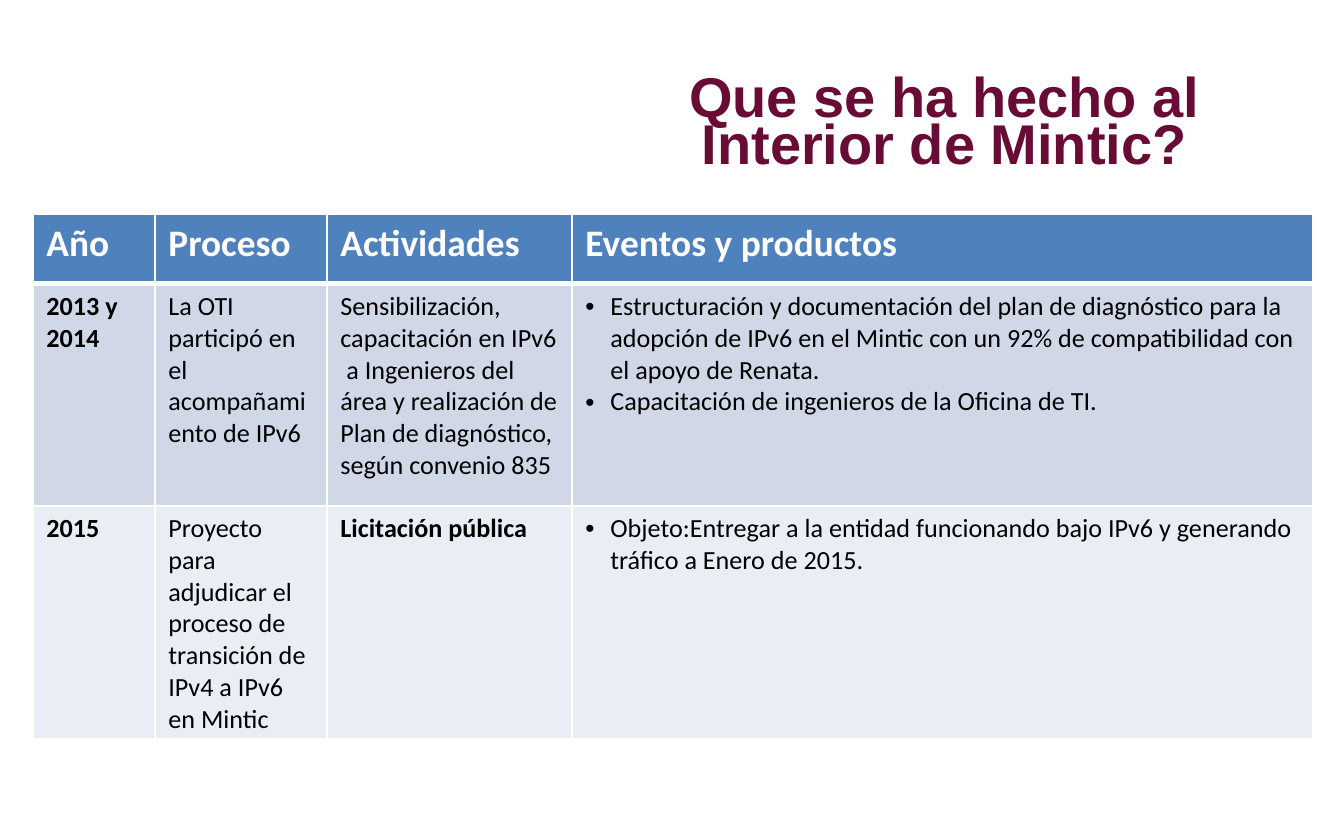
"""Build the slide on the IPv6 work done inside Mintic."""
from lxml.etree import SubElement
from pptx import Presentation
from pptx.dml.color import RGBColor
from pptx.enum.text import MSO_AUTO_SIZE, PP_ALIGN
from pptx.oxml.ns import qn
from pptx.util import Emu, Pt

TITLE = "Que se ha hecho al Interior de Mintic?"
HEADINGS = ["Año", "Proceso", "Actividades", "Eventos y productos"]
YEARS = [
    [
        ["2013 y", "2014"],
        ["La OTI participó en el acompañamiento de IPv6"],
        ["Sensibilización, capacitación en IPv6  a Ingenieros del área y "
         "realización de Plan de diagnóstico, según convenio 835"],
        ["Estructuración y documentación del plan de diagnóstico para la "
         "adopción de IPv6 en el Mintic con un 92% de compatibilidad con "
         "el apoyo de Renata.",
         "Capacitación de ingenieros de la Oficina de TI."],
    ],
    [
        ["2015"],
        ["Proyecto para adjudicar el proceso de transición de IPv4 a IPv6 "
         "en Mintic"],
        ["Licitación pública"],
        ["Objeto:Entregar a la entidad funcionando bajo IPv6 y generando "
         "tráfico a Enero de 2015."],
    ],
]
ROWS = [[[heading] for heading in HEADINGS]] + YEARS
BOLD_CELLS = {(1, 0), (2, 0), (2, 2)}
BULLET_COLUMN = 3
ROW_FILLS = ["4F81BD", "D0D8E8", "E9EDF4"]
COLUMN_WIDTHS = [122, 172, 245, 741]
ROW_HEIGHTS = [70, 222, 232]
TABLE_LEFT, TABLE_TOP = 33, 214
BULLET_INDENT = 25


def px(count):
    return Emu(round(count * 914400 / 134.4))


def color(code):
    return RGBColor.from_string(code)


def add_run(paragraph, words, font_name, size, code, bold):
    run = paragraph.add_run()
    run.text = words
    run.font.name = font_name
    run.font.size = Pt(size)
    run.font.bold = bold
    run.font.color.rgb = color(code)


def add_bullet(paragraph):
    properties = paragraph._p.get_or_add_pPr()
    properties.set("marL", str(px(BULLET_INDENT)))
    properties.set("indent", str(-px(BULLET_INDENT)))
    SubElement(properties, qn("a:buFont"), typeface="Arial")
    SubElement(properties, qn("a:buChar"), char="•")


def add_borders(cell, top, bottom):
    properties = cell._tc.get_or_add_tcPr()
    for side, width in (("L", 1), ("R", 1), ("T", top), ("B", bottom)):
        border = SubElement(properties, qn(f"a:ln{side}"), w=str(Pt(width)))
        fill = SubElement(border, qn("a:solidFill"))
        SubElement(fill, qn("a:srgbClr"), val="FFFFFF")


def add_title(slide):
    title = slide.shapes.add_textbox(px(575), px(73), px(739), px(109))
    frame = title.text_frame
    frame.word_wrap = True
    frame.auto_size = MSO_AUTO_SIZE.SHAPE_TO_FIT_TEXT
    paragraph = frame.paragraphs[0]
    paragraph.alignment = PP_ALIGN.CENTER
    paragraph.line_spacing = 0.7
    add_run(paragraph, TITLE, "Arial", 30, "680B35", True)


def fill_cell(cell, row, column, lines):
    is_heading = row == 0
    add_borders(cell, 3 if row == 1 else 1, 3 if is_heading else 1)
    cell.fill.solid()
    cell.fill.fore_color.rgb = color(ROW_FILLS[row])
    size, code = (20, "FFFFFF") if is_heading else (14, "000000")
    bold = is_heading or (row, column) in BOLD_CELLS
    frame = cell.text_frame
    for index, line in enumerate(lines):
        paragraph = frame.add_paragraph() if index else frame.paragraphs[0]
        if column == BULLET_COLUMN and not is_heading:
            add_bullet(paragraph)
        add_run(paragraph, line, "Calibri", size, code, bold)


def add_progress_table(slide):
    progress = slide.shapes.add_table(
        len(ROWS), len(HEADINGS), px(TABLE_LEFT), px(TABLE_TOP),
        px(sum(COLUMN_WIDTHS)), px(sum(ROW_HEIGHTS))).table
    for column, width in zip(progress.columns, COLUMN_WIDTHS):
        column.width = px(width)
    for row, height in zip(progress.rows, ROW_HEIGHTS):
        row.height = px(height)
    for row, cells in enumerate(ROWS):
        for column, lines in enumerate(cells):
            fill_cell(progress.cell(row, column), row, column, lines)


def main():
    deck = Presentation()
    deck.slide_width, deck.slide_height = px(1344), px(840)
    slide = deck.slides.add_slide(deck.slide_layouts[6])
    add_title(slide)
    add_progress_table(slide)
    deck.save("out.pptx")


if __name__ == "__main__":
    main()
